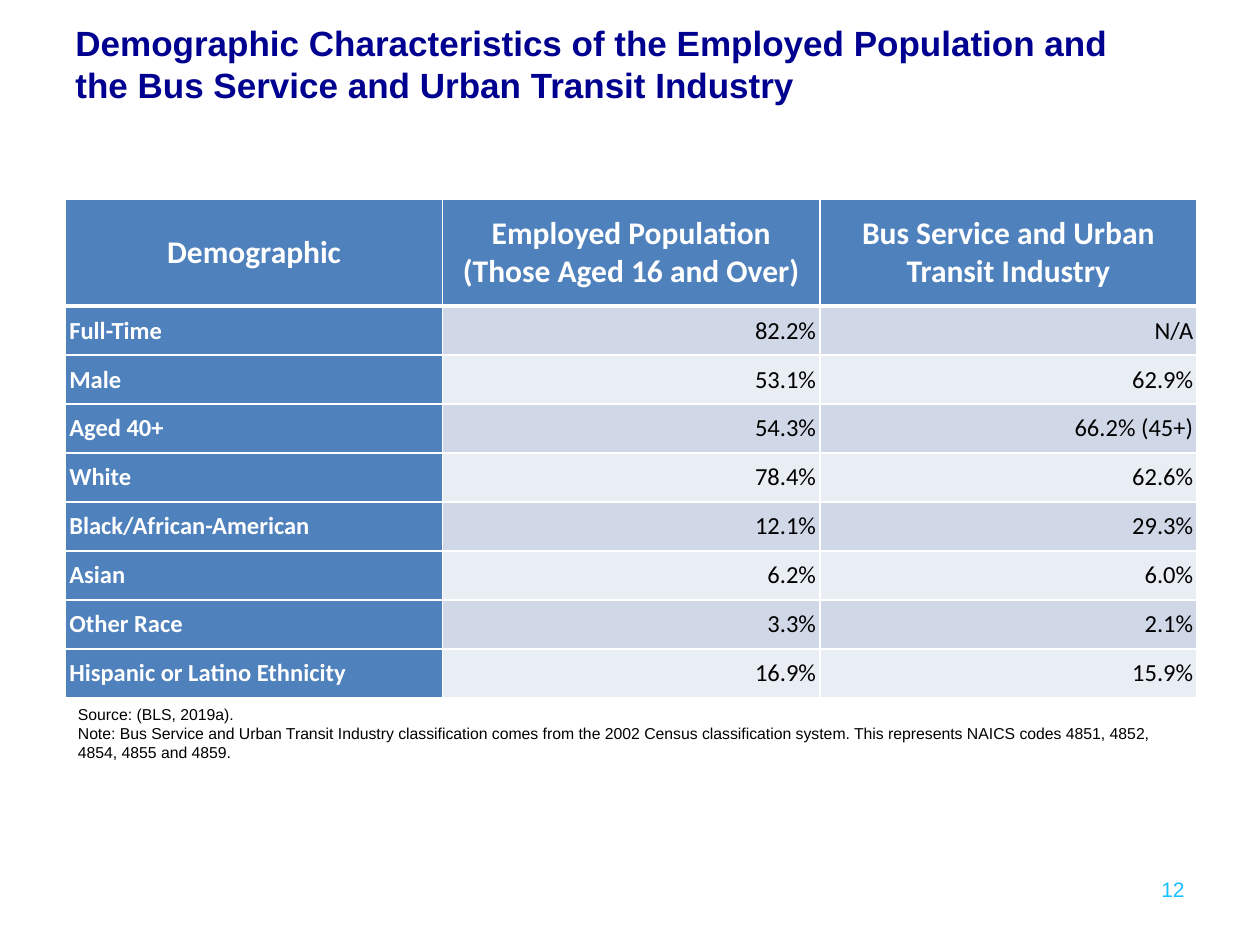
from lxml.etree import SubElement
from pptx import Presentation
from pptx.dml.color import RGBColor
from pptx.enum.text import MSO_ANCHOR as ANCHOR, PP_ALIGN as ALIGN
from pptx.oxml.ns import qn
from pptx.util import Inches, Pt

COLORS = {
    "title": "000090",
    "header": "4F81BD",
    "band_dark": "D0D8E8",
    "band_light": "E9EDF4",
    "white": "FFFFFF",
    "black": "000000",
    "number": "17C1FF",
}

HEADERS = [
    "Demographic",
    "Employed Population (Those Aged 16 and Over)",
    "Bus Service and Urban Transit Industry",
]
ROWS = [
    ("Full-Time", "82.2%", "N/A"),
    ("Male", "53.1%", "62.9%"),
    ("Aged 40+", "54.3%", "66.2% (45+)"),
    ("White", "78.4%", "62.6%"),
    ("Black/African-American", "12.1%", "29.3%"),
    ("Asian", "6.2%", "6.0%"),
    ("Other Race", "3.3%", "2.1%"),
    ("Hispanic or Latino Ethnicity", "16.9%", "15.9%"),
]
NOTES = [
    "Source: (BLS, 2019a).",
    "Note: Bus Service and Urban Transit Industry classification comes from the 2002 Census "
    "classification system. This represents NAICS codes 4851, 4852, 4854, 4855 and 4859.",
]


def rgb(name):
    return RGBColor.from_string(COLORS[name])


def write(p, text, size, color="black", font="Arial", bold=False, align=ALIGN.LEFT):
    p.alignment = align
    r = p.add_run()
    r.text = text
    r.font.size = Pt(size)
    r.font.name = font
    r.font.bold = bold
    r.font.color.rgb = rgb(color)


def add_text(s, box, lines, **style):
    tf = s.shapes.add_textbox(*map(Inches, box)).text_frame
    tf.word_wrap = True
    tf.vertical_anchor = ANCHOR.MIDDLE
    for i, line in enumerate(lines):
        write(tf.add_paragraph() if i else tf.paragraphs[0], line, **style)


def set_borders(cell, **widths):
    tc_pr = cell._tc.get_or_add_tcPr()
    for side in "LRTB":
        ln = SubElement(tc_pr, qn(f"a:ln{side}"), w=str(Pt(widths.get(side, 1))))
        fill = SubElement(ln, qn("a:solidFill"))
        SubElement(fill, qn("a:srgbClr"), val=COLORS["white"])


def fill_cell(cell, text, fill, borders, **style):
    set_borders(cell, **borders)
    cell.fill.solid()
    cell.fill.fore_color.rgb = rgb(fill)
    cell.margin_left = cell.margin_right = Inches(0.03)
    cell.margin_top = cell.margin_bottom = 0
    cell.vertical_anchor = ANCHOR.MIDDLE
    write(cell.text_frame.paragraphs[0], text, font="Calibri", **style)


def add_demographics(s, box, header_height=0.85):
    left, top, width, height = box
    table = s.shapes.add_table(len(ROWS) + 1, len(HEADERS), *map(Inches, box)).table
    for column in table.columns:
        column.width = Inches(width / len(HEADERS))
    for i, row in enumerate(table.rows):
        row.height = Inches((height - header_height) / len(ROWS) if i else header_height)

    label = dict(color="white", bold=True)
    for j, text in enumerate(HEADERS):
        fill_cell(table.cell(0, j), text, "header", {"B": 3}, size=18, align=ALIGN.CENTER, **label)
    for i, values in enumerate(ROWS, 1):
        borders = {"T": 3} if i == 1 else {}
        band = "band_dark" if i % 2 else "band_light"
        for j, text in enumerate(values):
            style = dict(align=ALIGN.RIGHT) if j else label
            fill_cell(table.cell(i, j), text, band if j else "header", borders, size=14, **style)


def main():
    prs = Presentation()
    prs.slide_width, prs.slide_height = Inches(10), Inches(7.5)
    s = prs.slides.add_slide(prs.slide_layouts[6])
    title = (
        "Demographic Characteristics of the Employed Population "
        "and the Bus Service and Urban Transit Industry"
    )
    add_text(s, (0.5, 0, 8.56, 1.01), [title], size=20, color="title", bold=True)
    add_demographics(s, (0.52, 1.58, 8.98, 3.96))
    add_text(s, (8.78, 6.92, 0.72, 0.27), ["12"], size=12, color="number", align=ALIGN.RIGHT)
    add_text(s, (0.52, 5.54, 9, 0.56), NOTES, size=9)
    prs.save("out.pptx")


if __name__ == "__main__":
    main()
